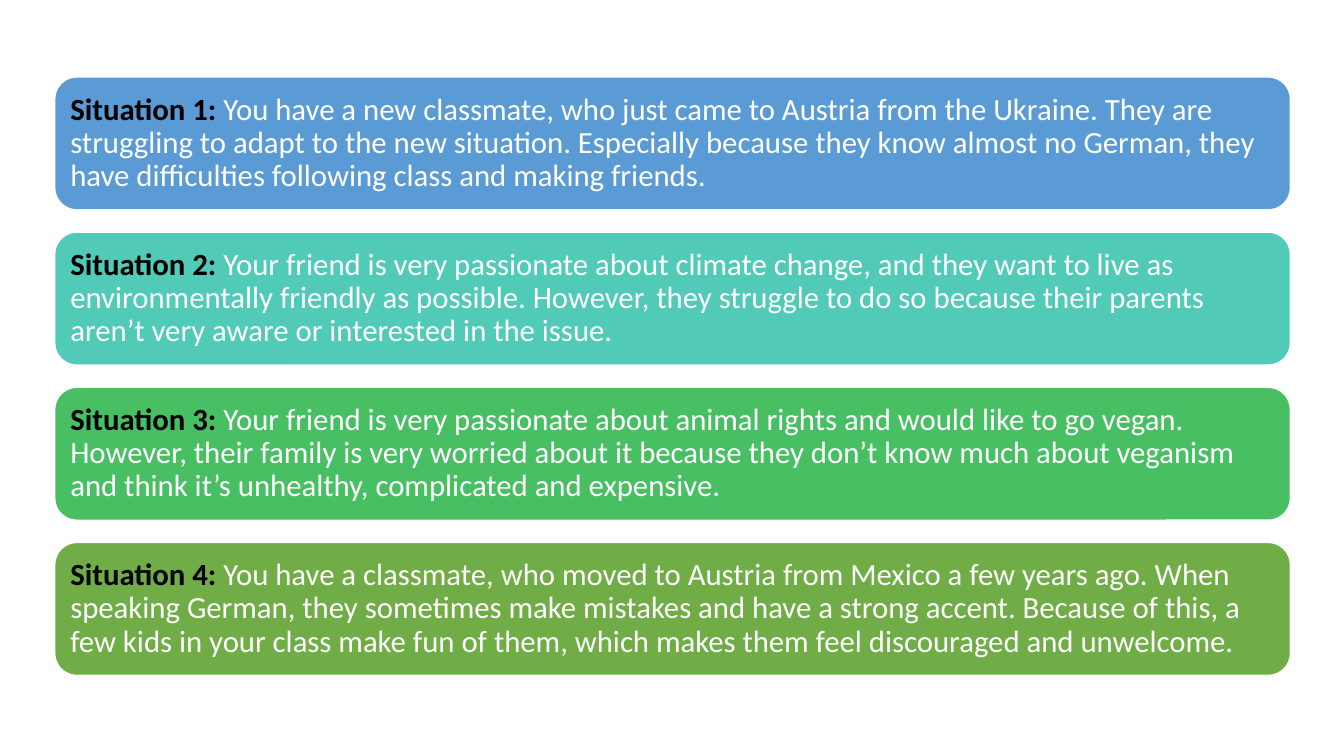
import dataclasses

import pptx
import pptx.dml.color
import pptx.enum.shapes
import pptx.enum.text
import pptx.util


@dataclasses.dataclass(frozen=True)
class Theme:
    font: str = "Calibri"
    size: int = 22
    label: str = "000000"
    body: str = "FFFFFF"
    outline: str = "FFFFFF"
    cards: tuple = ("5B9BD5", "52CAB8", "49BF64", "70AD47")


SITUATIONS = (
    "You have a new classmate, who just came to Austria from the Ukraine. "
    "They are struggling to adapt to the new situation. Especially because they know "
    "almost no German, they have difficulties following class and making friends.",
    "Your friend is very passionate about climate change, and they want to live as "
    "environmentally friendly as possible. However, they struggle to do so because "
    "their parents aren’t very aware or interested in the issue.",
    "Your friend is very passionate about animal rights and would like to go vegan. "
    "However, their family is very worried about it because they don’t know much about "
    "veganism and think it’s unhealthy, complicated and expensive.",
    "You have a classmate, who moved to Austria from Mexico a few years ago. "
    "When speaking German, they sometimes make mistakes and have a strong accent. "
    "Because of this, a few kids in your class make fun of them, which makes them feel "
    "discouraged and unwelcome.",
)
CARD_LEFT, CARD_TOP = 1.38, 1.94
CARD_WIDTH, CARD_HEIGHT = 31.14, 3.35
CARD_PITCH = 3.91


class SlideBuilder:
    def __init__(self, slide, theme):
        self.slide = slide
        self.theme = theme

    def color(self, value):
        return pptx.dml.color.RGBColor.from_string(value)

    def run(self, paragraph, text, color, bold=False):
        run = paragraph.add_run()
        run.text = text
        run.font.name = self.theme.font
        run.font.size = pptx.util.Pt(self.theme.size)
        run.font.bold = bold
        run.font.color.rgb = self.color(color)

    def card(self, top, fill, label, body):
        shape = self.slide.shapes.add_shape(
            pptx.enum.shapes.MSO_SHAPE.ROUNDED_RECTANGLE,
            pptx.util.Cm(CARD_LEFT),
            pptx.util.Cm(top),
            pptx.util.Cm(CARD_WIDTH),
            pptx.util.Cm(CARD_HEIGHT),
        )
        shape.name = label
        shape.shadow.inherit = False
        shape.fill.solid()
        shape.fill.fore_color.rgb = self.color(fill)
        shape.line.color.rgb = self.color(self.theme.outline)
        shape.line.width = pptx.util.Pt(1)

        frame = shape.text_frame
        frame.word_wrap = True
        frame.vertical_anchor = pptx.enum.text.MSO_ANCHOR.MIDDLE
        frame.margin_left = frame.margin_right = pptx.util.Cm(0.23)
        frame.margin_top = frame.margin_bottom = pptx.util.Cm(0.23)
        paragraph = frame.paragraphs[0]
        paragraph.alignment = pptx.enum.text.PP_ALIGN.LEFT
        paragraph.line_spacing = 0.9
        self.run(paragraph, f"{label}: ", self.theme.label, bold=True)
        self.run(paragraph, body, self.theme.body)


def main():
    presentation = pptx.Presentation()
    presentation.slide_width = pptx.util.Cm(33.87)
    presentation.slide_height = pptx.util.Cm(19.05)
    slide = presentation.slides.add_slide(presentation.slide_layouts[6])
    theme = Theme()
    builder = SlideBuilder(slide, theme)
    for index, (fill, body) in enumerate(zip(theme.cards, SITUATIONS)):
        builder.card(CARD_TOP + index * CARD_PITCH, fill, f"Situation {index + 1}", body)
    presentation.save("out.pptx")


if __name__ == "__main__":
    main()
